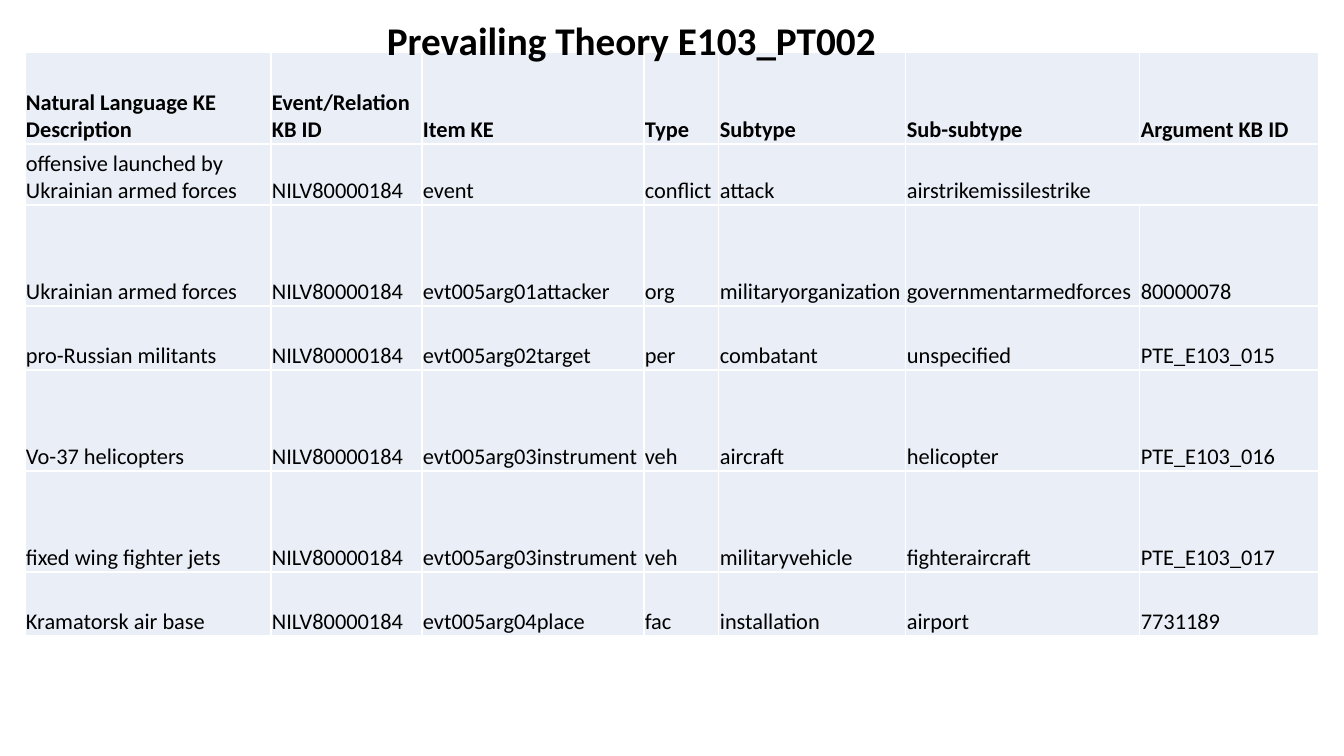
from lxml import etree
from pptx import Presentation
from pptx.dml.color import RGBColor
from pptx.enum.text import MSO_ANCHOR, MSO_AUTO_SIZE
from pptx.oxml.ns import qn
from pptx.util import Pt

BOTTOM = MSO_ANCHOR.BOTTOM
GROW = MSO_AUTO_SIZE.SHAPE_TO_FIT_TEXT
COLORS = {"text": "000000", "cell": "EAEFF7", "border": "FFFFFF"}
FONT = "Calibri"
EVENT_ID = "NILV80000184"


def px(length):
    return round(length * 914400 / 100.8)


def style_text(text_frame, size, bold):
    for paragraph in text_frame.paragraphs:
        for run in paragraph.runs:
            run.font.name = FONT
            run.font.size = Pt(size)
            run.font.bold = bold
            run.font.color.rgb = RGBColor.from_string(COLORS["text"])


presentation = Presentation()
presentation.slide_width = px(1344)
presentation.slide_height = px(756)
slide = presentation.slides.add_slide(presentation.slide_layouts[6])

column_widths = [246, 151, 222, 75, 187, 234, 179]
row_heights = [92, 61, 101, 64, 101, 101, 64]
rows = [
    ["Natural Language KE Description", "Event/Relation KB ID", "Item KE", "Type",
     "Subtype", "Sub-subtype", "Argument KB ID"],
    ["offensive launched by Ukrainian armed forces", EVENT_ID, "event", "conflict",
     "attack", "airstrikemissilestrike", ""],
    ["Ukrainian armed forces", EVENT_ID, "evt005arg01attacker", "org",
     "militaryorganization", "governmentarmedforces", "80000078"],
    ["pro-Russian militants", EVENT_ID, "evt005arg02target", "per",
     "combatant", "unspecified", "PTE_E103_015"],
    ["Vo-37 helicopters", EVENT_ID, "evt005arg03instrument", "veh",
     "aircraft", "helicopter", "PTE_E103_016"],
    ["fixed wing fighter jets", EVENT_ID, "evt005arg03instrument", "veh",
     "militaryvehicle", "fighteraircraft", "PTE_E103_017"],
    ["Kramatorsk air base", EVENT_ID, "evt005arg04place", "fac",
     "installation", "airport", "7731189"],
]

table = slide.shapes.add_table(
    len(rows), len(column_widths), px(25), px(52),
    px(sum(column_widths)), px(sum(row_heights))).table
for column, width in zip(table.columns, column_widths):
    column.width = px(width)
for row, height in zip(table.rows, row_heights):
    row.height = px(height)
table.cell(1, 5).merge(table.cell(1, 6))

for row_index, texts in enumerate(rows):
    for column_index, text in enumerate(texts):
        cell = table.cell(row_index, column_index)
        cell.margin_left = cell.margin_right = cell.margin_top = px(1)
        cell.margin_bottom = 0
        cell.vertical_anchor = BOTTOM
        properties = cell._tc.get_or_add_tcPr()
        for side in ("lnL", "lnR", "lnT", "lnB"):
            line = etree.SubElement(properties, qn(f"a:{side}"), w=str(Pt(1)))
            line_fill = etree.SubElement(line, qn("a:solidFill"))
            etree.SubElement(line_fill, qn("a:srgbClr"), val=COLORS["border"])
        cell.fill.solid()
        cell.fill.fore_color.rgb = RGBColor.from_string(COLORS["cell"])
        if text:
            cell.text_frame.text = text
            style_text(cell.text_frame, 16, row_index == 0)

title = slide.shapes.add_textbox(px(377), px(11), px(572), px(57))
title.text_frame.word_wrap = True
title.text_frame.auto_size = GROW
title.text_frame.text = "Prevailing Theory E103_PT002"
style_text(title.text_frame, 28, True)

presentation.save("out.pptx")
